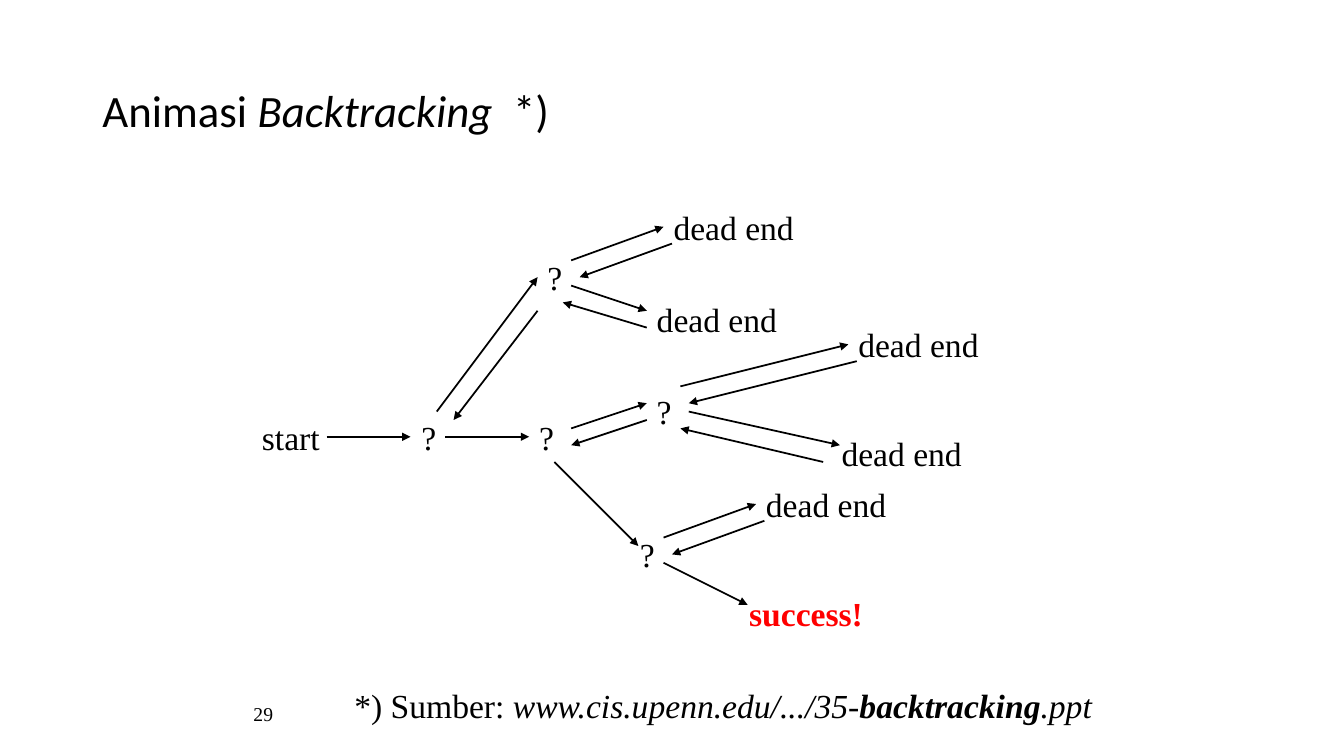
"""Build the backtracking animation slide with its search tree."""
from lxml.etree import SubElement
from pptx import Presentation
from pptx.dml.color import RGBColor
from pptx.enum.shapes import MSO_CONNECTOR as Connector
from pptx.enum.text import MSO_ANCHOR as Anchor, PP_ALIGN as Align
from pptx.oxml.ns import qn
from pptx.util import Pt

PX = 9525
COLORS = {"ink": "000000", "success": "FF0000"}
SERIF, SANS = "Times New Roman", "Calibri"

TITLE = [("Animasi ", ""), ("Backtracking  ", "i"), ("*)", "")]
SOURCE = [("*) Sumber: ", ""), ("www.cis.upenn.edu/.../35-", "i"),
          ("backtracking", "bi"), (".ppt", "i")]
PAGE_NUMBER = "29"

LABELS = [
    ("start", 240, 392), ("?", 392, 392), ("?", 512, 240), ("?", 504, 392),
    ("?", 616, 368), ("?", 600, 504), ("dead end", 632, 192),
    ("dead end", 616, 280), ("dead end", 808, 304), ("dead end", 792, 408),
    ("dead end", 720, 456), ("success!", 704, 560),
]
LABEL_WIDTHS = {"start": 80, "?": 48, "dead end": 168, "success!": 168}
LABEL_HEIGHT = 48

FORWARD = [
    (311, 416, 391, 416), (416, 392, 512, 264), (424, 416, 504, 416),
    (544, 248, 632, 216), (544, 272, 616, 296), (544, 408, 616, 384),
    (648, 368, 808, 328), (656, 392, 800, 424), (528, 440, 608, 520),
    (632, 512, 720, 480), (632, 536, 712, 576),
]
BACKWARD = [
    (640, 232, 552, 264), (616, 312, 536, 288), (512, 296, 432, 400),
    (816, 344, 656, 384), (784, 440, 648, 408), (616, 400, 544, 424),
    (728, 496, 640, 528),
]


def px(*lengths):
    return [length * PX for length in lengths]


def style(font, name, size, color="ink"):
    font.name, font.size = name, Pt(size)
    font.color.rgb = RGBColor.from_string(COLORS[color])


def add_spans(para, spans):
    for text, marks in spans:
        span = para.add_run()
        span.text = text
        if "i" in marks:
            span.font.italic = True
        if "b" in marks:
            span.font.bold = True


def add_text(page, place, spans, size=24, color="ink", anchor=Anchor.TOP, wrap=True):
    frame = page.shapes.add_textbox(*px(*place)).text_frame
    frame.word_wrap, frame.vertical_anchor = wrap, anchor
    para = frame.paragraphs[0]
    para.alignment = Align.LEFT
    style(para.font, SERIF, size, color)
    add_spans(para, spans)


def add_arrow(page, ends):
    arrow = page.shapes.add_connector(Connector.STRAIGHT, *px(*ends))
    arrow.line.color.rgb = RGBColor.from_string(COLORS["ink"])
    arrow.line.width = Pt(1.25)
    SubElement(arrow.line._get_or_add_ln(), qn("a:tailEnd"), type="triangle")
    SubElement(arrow._element.spPr, qn("a:effectLst"))


def add_title(page):
    title = page.shapes.title
    title.left, title.top, title.width, title.height = px(88, 38, 1104, 139)
    title.text_frame.vertical_anchor = Anchor.MIDDLE
    para = title.text_frame.paragraphs[0]
    para.alignment, para.line_spacing = Align.LEFT, 0.9
    style(para.font, SANS, 32)
    add_spans(para, TITLE)


def main():
    deck = Presentation()
    deck.slide_width, deck.slide_height = px(1280, 720)
    page = deck.slides.add_slide(deck.slide_layouts[5])
    add_title(page)
    for text, left, top in LABELS:
        success = text == "success!"
        place = (left, top, LABEL_WIDTHS[text], LABEL_HEIGHT)
        add_text(page, place, [(text, "b" if success else "")],
                 color="success" if success else "ink")
    for ends in FORWARD + BACKWARD:
        add_arrow(page, ends)
    add_text(page, (232, 656, 200, 48), [(PAGE_NUMBER, "")], 14, anchor=Anchor.MIDDLE)
    add_text(page, (328, 648, 736, 49), SOURCE, wrap=False)
    deck.save("out.pptx")


if __name__ == "__main__":
    main()
